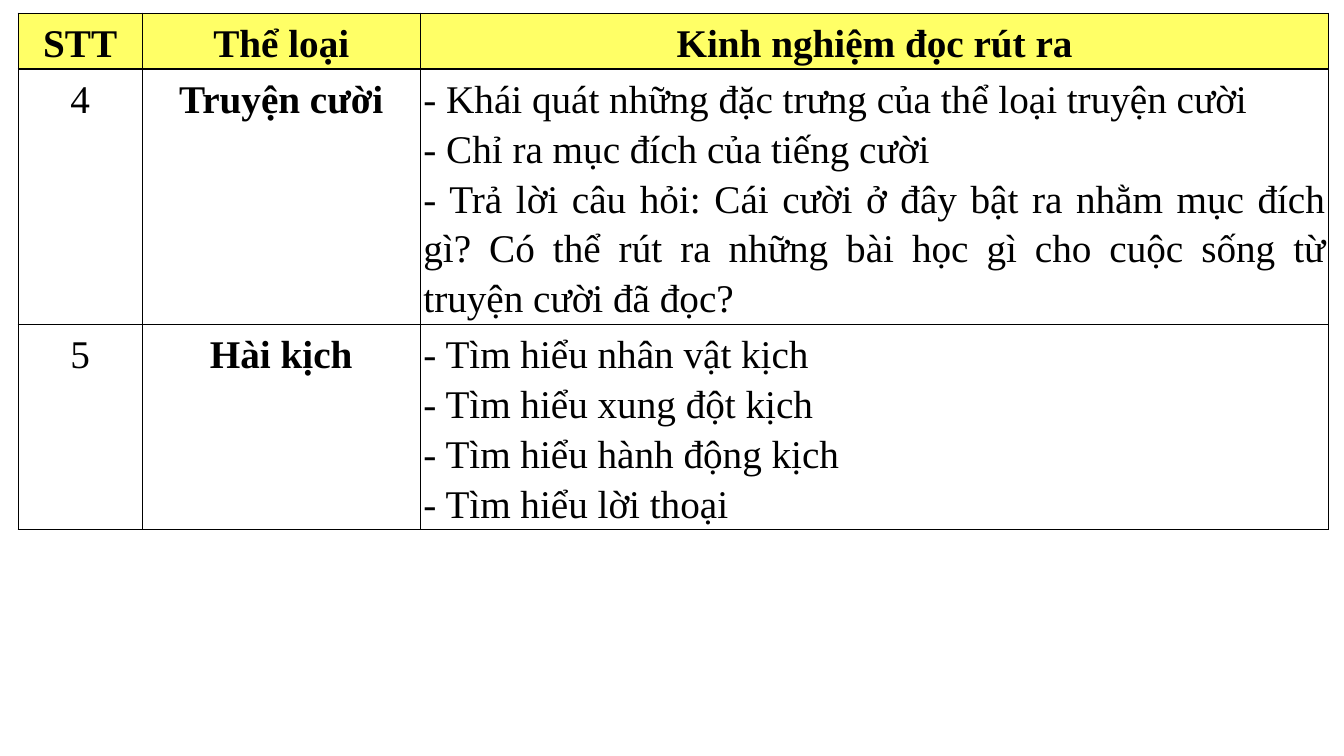
"""Builds a slide with a table of reading experience by literary genre."""
from dataclasses import dataclass

from lxml.etree import SubElement
from pptx import Presentation
from pptx.dml.color import RGBColor
from pptx.enum.text import MSO_ANCHOR, PP_ALIGN
from pptx.oxml.ns import qn
from pptx.util import Inches, Pt


@dataclass(frozen=True)
class Theme:
    font: str = "Times New Roman"
    text_size: float = 28
    line_spacing: float = 1.15
    text: str = "000000"
    border: str = "000000"
    border_width: float = 1
    header_fill: str = "FFFF66"
    body_fill: str = "FFFFFF"
    cell_margin: float = 0.03


class SlideBuilder:
    GRID_COLUMNS = 160
    GRID_ROWS = 90

    def __init__(self, presentation, theme):
        self.theme = theme
        self.column = presentation.slide_width / self.GRID_COLUMNS
        self.row = presentation.slide_height / self.GRID_ROWS
        self.slide = presentation.slides.add_slide(presentation.slide_layouts[6])

    def add_table(self, left, top, widths, heights, records, alignments):
        frame = self.slide.shapes.add_table(
            len(heights), len(widths),
            round(left * self.column), round(top * self.row),
            round(sum(widths) * self.column), round(sum(heights) * self.row),
        )
        table = frame.table
        table.horz_banding = False
        for table_column, width in zip(table.columns, widths):
            table_column.width = round(width * self.column)
        for table_row, height in zip(table.rows, heights):
            table_row.height = round(height * self.row)
        for row_index, record in enumerate(records):
            for column_index, text in enumerate(record):
                self.fill_cell(
                    table.cell(row_index, column_index), text,
                    bold=row_index == 0 or column_index == 1,
                    fill=self.theme.body_fill if row_index else self.theme.header_fill,
                    alignment=alignments[row_index][column_index],
                )

    def fill_cell(self, cell, text, bold, fill, alignment):
        margin = Inches(self.theme.cell_margin)
        cell.margin_left = cell.margin_right = margin
        cell.margin_top = cell.margin_bottom = margin
        cell.vertical_anchor = MSO_ANCHOR.TOP
        self.draw_borders(cell)
        cell.fill.solid()
        cell.fill.fore_color.rgb = RGBColor.from_string(fill)
        cell.text_frame.text = text
        for paragraph in cell.text_frame.paragraphs:
            paragraph.alignment = alignment
            paragraph.line_spacing = self.theme.line_spacing
            paragraph.font.name = self.theme.font
            paragraph.font.size = Pt(self.theme.text_size)
            paragraph.font.bold = bold
            paragraph.font.color.rgb = RGBColor.from_string(self.theme.text)

    def draw_borders(self, cell):
        properties = cell._tc.get_or_add_tcPr()
        for side in ("lnL", "lnR", "lnT", "lnB"):
            line = SubElement(properties, qn(f"a:{side}"), w=str(Pt(self.theme.border_width)))
            solid_fill = SubElement(line, qn("a:solidFill"))
            SubElement(solid_fill, qn("a:srgbClr"), val=self.theme.border)


RECORDS = [
    ("STT", "Thể loại", "Kinh nghiệm đọc rút ra"),
    ("4", "Truyện cười", "\n".join([
        "- Khái quát những đặc trưng của thể loại truyện cười",
        "- Chỉ ra mục đích của tiếng cười",
        "- Trả lời câu hỏi: Cái cười ở đây bật ra nhằm mục đích gì? "
        "Có thể rút ra những bài học gì cho cuộc sống từ truyện cười đã đọc?",
    ])),
    ("5", "Hài kịch", "\n".join([
        "- Tìm hiểu nhân vật kịch",
        "- Tìm hiểu xung đột kịch",
        "- Tìm hiểu hành động kịch",
        "- Tìm hiểu lời thoại",
    ])),
]
ALIGNMENTS = [
    (PP_ALIGN.CENTER, PP_ALIGN.CENTER, experience)
    for experience in (PP_ALIGN.CENTER, PP_ALIGN.JUSTIFY, PP_ALIGN.LEFT)
]


def main():
    presentation = Presentation()
    presentation.slide_width = Inches(13.33)
    presentation.slide_height = Inches(7.5)
    builder = SlideBuilder(presentation, Theme())
    builder.add_table(
        left=2.16, top=1.56,
        widths=(14.76, 33.13, 108.15), heights=(6.6, 30.36, 24.4),
        records=RECORDS, alignments=ALIGNMENTS,
    )
    presentation.save("out.pptx")


if __name__ == "__main__":
    main()
